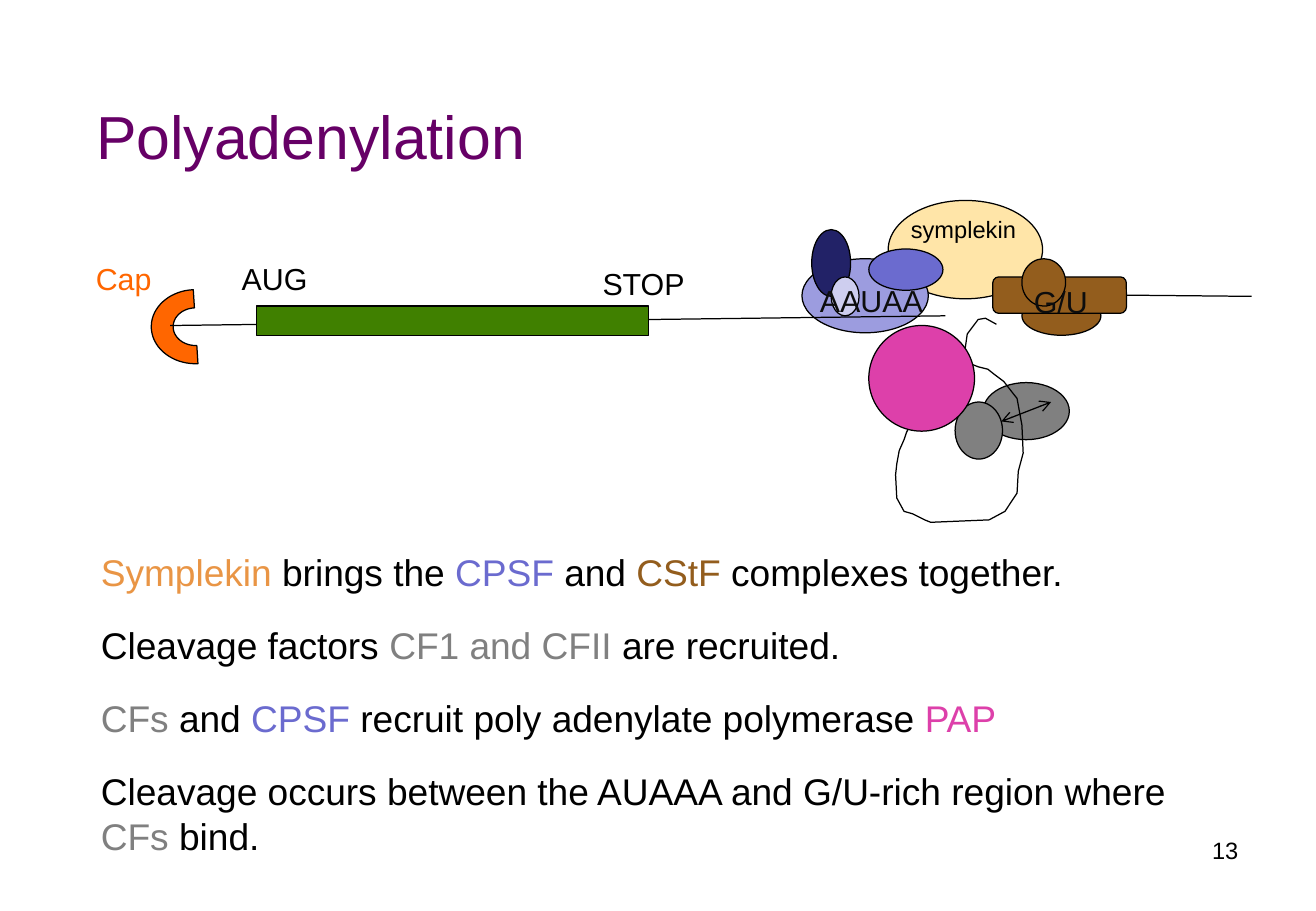
from dataclasses import dataclass
from math import cos, radians, sin

from lxml import etree
from pptx import Presentation
from pptx.dml import color
from pptx.enum import shapes, text
from pptx.oxml import ns
from pptx.util import Inches, Pt


@dataclass(frozen=True)
class Theme:
    font: str = "Arial"
    black: str = "000000"
    ink: str = "0D0D0D"
    purple: str = "660066"
    cap: str = "FF6600"
    coding: str = "408000"
    symplekin: str = "FFE5A8"
    symplekin_text: str = "E99545"
    cpsf: str = "6B6BCF"
    cpsf_light: str = "9C9CDF"
    cpsf_pale: str = "CECEEF"
    cpsf_dark: str = "222267"
    cstf: str = "935D1D"
    cf: str = "808080"
    pap: str = "DD40AA"
    title_size: int = 36
    body_size: int = 22
    label_size: int = 18
    small_size: int = 14
    line_width: float = 0.75


theme = Theme()
preset = shapes.MSO_SHAPE
prs = Presentation()
prs.slide_width, prs.slide_height = Inches(10.83), Inches(7.5)
slide = prs.slides.add_slide(prs.slide_layouts[1])


def outline(shape, fill):
    shape.shadow.inherit = False
    if fill:
        shape.fill.solid()
        shape.fill.fore_color.rgb = color.RGBColor.from_string(fill)
    else:
        shape.fill.background()
    shape.line.color.rgb = color.RGBColor.from_string(theme.black)
    shape.line.width = Pt(theme.line_width)


def write(paragraph, words, tint, size):
    run = paragraph.add_run()
    run.text = words
    run.font.name = theme.font
    run.font.size = Pt(size)
    run.font.color.rgb = color.RGBColor.from_string(tint)


title = slide.shapes.title
title.left, title.top, title.width, title.height = map(Inches, (0.69, 0.76, 3.77, 0.71))
title.text_frame.word_wrap = False
title.text_frame.vertical_anchor = text.MSO_ANCHOR.TOP
title.text_frame.paragraphs[0].alignment = text.PP_ALIGN.LEFT
write(title.text_frame.paragraphs[0], "Polyadenylation", theme.purple, theme.title_size)

steps = [
    [("Symplekin", theme.symplekin_text), (" brings the ", theme.black), ("CPSF", theme.cpsf),
     (" and ", theme.black), ("CStF", theme.cstf), (" complexes together.", theme.black)],
    [("Cleavage factors ", theme.black), ("CF1 and CFII ", theme.cf),
     ("are recruited.", theme.black)],
    [("CFs", theme.cf), (" and ", theme.black), ("CPSF", theme.cpsf),
     (" recruit poly adenylate polymerase ", theme.black), ("PAP", theme.pap)],
    [("Cleavage occurs between the AUAAA and G/U-rich region where ", theme.black),
     ("CFs", theme.cf), (" bind.", theme.black)],
]
body = slide.placeholders[1]
body.left, body.top, body.width, body.height = map(Inches, (0.73, 4.47, 9.45, 2.66))
for index, step in enumerate(steps):
    paragraph = body.text_frame.paragraphs[0] if index == 0 else body.text_frame.add_paragraph()
    paragraph.line_spacing = Pt(26.6)
    paragraph.space_before = Pt(0)
    paragraph.space_after = Pt(16.7)
    properties = paragraph._p.get_or_add_pPr()
    properties.set("marL", "0")
    properties.set("indent", "0")
    etree.SubElement(properties, ns.qn("a:buNone"))
    for words, tint in step:
        write(paragraph, words, tint, theme.body_size)

for left, top, width, height, fill, name in [
    (8.09, 3.15, 0.71, 0.47, theme.cf, ""),
    (7.31, 1.65, 1.27, 0.81, theme.symplekin, "symplekin"),
    (6.6, 2.13, 1.04, 0.61, theme.cpsf_light, ""),
    (6.68, 1.89, 0.32, 0.55, theme.cpsf_dark, ""),
    (6.84, 2.28, 0.23, 0.32, theme.cpsf_pale, ""),
    (7.15, 2.05, 0.61, 0.34, theme.cpsf, ""),
]:
    protein = slide.shapes.add_shape(
        preset.OVAL, Inches(left), Inches(top), Inches(width), Inches(height))
    outline(protein, fill)
    if name:
        frame = protein.text_frame
        frame.margin_left = frame.margin_right = frame.margin_top = frame.margin_bottom = 0
        frame.vertical_anchor = text.MSO_ANCHOR.TOP
        frame.paragraphs[0].alignment = text.PP_ALIGN.LEFT
        write(frame.paragraphs[0], name, theme.black, theme.small_size)

sweep = [radians(angle) for angle in range(87, 268, 5)]
inner = [(Inches(1.61 + 0.185 * cos(a)), Inches(2.69 + 0.155 * sin(a))) for a in sweep]
outer = [(Inches(1.61 + 0.365 * cos(a)), Inches(2.69 + 0.305 * sin(a))) for a in reversed(sweep)]
cap_builder = slide.shapes.build_freeform(*inner[0])
cap_builder.add_line_segments(inner[1:] + outer, close=True)
outline(cap_builder.convert_to_shape(), theme.cap)

straight = shapes.MSO_CONNECTOR.STRAIGHT
backbone = slide.shapes.add_connector(
    straight, Inches(1.4), Inches(2.68), Inches(7.78), Inches(2.6))
coding_region = slide.shapes.add_shape(
    preset.RECTANGLE, Inches(2.11), Inches(2.52), Inches(3.23), Inches(0.24))
outline(coding_region, theme.coding)

for kind, left, top, width, height in [
    (preset.OVAL, 8.41, 2.44, 0.65, 0.32),
    (preset.ROUNDED_RECTANGLE, 8.17, 2.28, 1.1, 0.3),
    (preset.OVAL, 8.41, 2.13, 0.36, 0.39),
]:
    cstf_part = slide.shapes.add_shape(
        kind, Inches(left), Inches(top), Inches(width), Inches(height))
    outline(cstf_part, theme.cstf)
    if kind == preset.ROUNDED_RECTANGLE:
        cstf_core = cstf_part

for words, left, top, width, height, tint, size, align in [
    ("AAUAA", 6.65, 2.27, 1.06, 0.4, theme.ink, theme.label_size, text.PP_ALIGN.LEFT),
    ("STOP", 4.86, 2.13, 0.89, 0.4, theme.black, theme.label_size, text.PP_ALIGN.LEFT),
    ("AUG", 1.89, 2.09, 0.75, 0.4, theme.black, theme.label_size, text.PP_ALIGN.LEFT),
    ("Cap", 0.69, 2.09, 0.66, 0.4, theme.cap, theme.label_size, text.PP_ALIGN.LEFT),
    ("G/U", 8.41, 2.28, 0.87, 0.4, theme.ink, theme.label_size, text.PP_ALIGN.LEFT),
    ("13", 7.76, 6.83, 2.53, 0.52, theme.black, theme.small_size, text.PP_ALIGN.RIGHT),
]:
    label = slide.shapes.add_textbox(Inches(left), Inches(top), Inches(width), Inches(height))
    label.text_frame.word_wrap = True
    label.text_frame.paragraphs[0].alignment = align
    write(label.text_frame.paragraphs[0], words, tint, size)

loop_points = [(Inches(x), Inches(y)) for x, y in [
    (7.77, 2.78), (7.76, 2.95), (7.72, 3.02), (7.7, 3.1), (7.64, 3.21), (7.55, 3.38),
    (7.46, 3.56), (7.44, 3.62), (7.4, 3.71), (7.38, 3.82), (7.37, 3.91), (7.38, 4.1),
    (7.44, 4.21), (7.51, 4.23), (7.61, 4.28), (7.66, 4.3), (8.14, 4.28), (8.27, 4.21),
    (8.31, 4.15), (8.37, 4.06), (8.38, 3.88), (8.42, 3.73), (8.41, 3.5), (8.37, 3.28),
    (8.33, 3.23), (8.26, 3.14), (8.18, 3.08), (8.13, 3.04), (8.05, 3.02), (8, 3),
    (7.95, 2.94), (7.94, 2.89), (7.96, 2.75), (8.05, 2.63), (8.11, 2.62), (8.2, 2.67),
]]
loop_builder = slide.shapes.build_freeform(*loop_points[0])
loop_builder.add_line_segments(loop_points[1:], close=False)
outline(loop_builder.convert_to_shape(), None)

downstream = slide.shapes.add_connector(
    straight, Inches(9.27), Inches(2.43), Inches(10.3), Inches(2.44))
downstream.begin_connect(cstf_core, 3)

for left, top, width, height, fill in [
    (7.86, 3.31, 0.39, 0.47, theme.cf),
    (7.15, 2.68, 0.87, 0.87, theme.pap),
]:
    factor = slide.shapes.add_shape(
        preset.OVAL, Inches(left), Inches(top), Inches(width), Inches(height))
    outline(factor, fill)

cf_link = slide.shapes.add_connector(
    straight, Inches(8.65), Inches(3.31), Inches(8.24), Inches(3.47))
for strand in (backbone, downstream, cf_link):
    strand.line.color.rgb = color.RGBColor.from_string(theme.black)
    strand.line.width = Pt(theme.line_width)
    etree.SubElement(strand._element.spPr, ns.qn("a:effectLst"))
for end in ("a:headEnd", "a:tailEnd"):
    etree.SubElement(cf_link.line._get_or_add_ln(), ns.qn(end), type="arrow")

prs.save("out.pptx")
